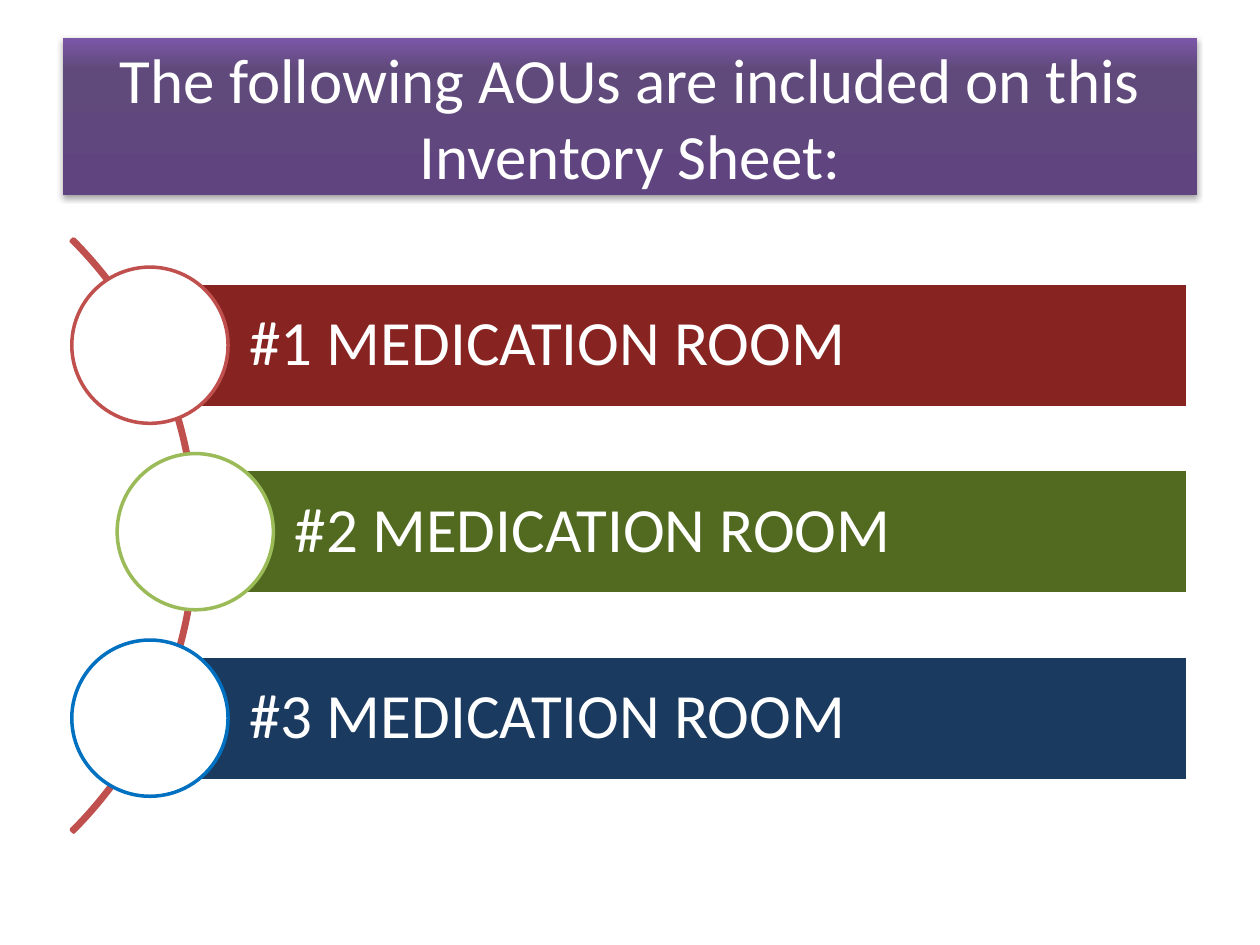
from dataclasses import dataclass

from lxml import etree
from pptx import Presentation
from pptx.dml.color import RGBColor
from pptx.enum.shapes import MSO_SHAPE as Shape
from pptx.enum.text import MSO_ANCHOR as Anchor, PP_ALIGN as Align
from pptx.oxml import parse_xml
from pptx.oxml.ns import nsdecls, qn
from pptx.util import Inches, Pt

# Content: label, bar colour, circle outline, left edge of the bar
TITLE = "The following AOUs are included on this Inventory Sheet:"
ROOMS = [
    ("#1 MEDICATION ROOM", "872321", "C0504D", 1.19),
    ("#2 MEDICATION ROOM", "516A20", "9BBB59", 1.55),
    ("#3 MEDICATION ROOM", "1B3A5F", "0070C0", 1.19),
]


@dataclass(frozen=True)
class Theme:
    font: str = "Calibri"
    size: int = 36
    line: int = 2
    white: str = "FFFFFF"
    arc: str = "C0504D"
    title_stops: tuple = ((0, "5F4480"), (80, "604A7B"), (100, "7C57A8"))


THEME = Theme()

# Layout in inches
BAR_RIGHT, BAR_HEIGHT = 9.43, 0.99
FIRST_CENTER, PITCH = 2.74, 1.48
CIRCLE = 1.24


def add_shape(slide, kind, left, top, width, height, fill=None, line=None):
    shape = slide.shapes.add_shape(
        kind, Inches(left), Inches(top), Inches(width), Inches(height))
    shape.shadow.inherit = False
    if fill:
        shape.fill.solid()
        shape.fill.fore_color.rgb = RGBColor.from_string(fill)
    else:
        shape.fill.background()
    if line:
        shape.line.color.rgb = RGBColor.from_string(line)
        shape.line.width = Pt(THEME.line)
    else:
        shape.line.fill.background()
    return shape


def set_text(shape, text, align):
    frame = shape.text_frame
    frame.word_wrap = True
    frame.vertical_anchor = Anchor.MIDDLE
    paragraph = frame.paragraphs[0]
    paragraph.text = text
    paragraph.alignment = align
    paragraph.font.name = THEME.font
    paragraph.font.size = Pt(THEME.size)
    paragraph.font.color.rgb = RGBColor.from_string(THEME.white)
    return frame, paragraph


def add_title(slide):
    banner = add_shape(slide, Shape.RECTANGLE, 0.5, 0.3, 9, 1.25)
    set_text(banner, TITLE, Align.CENTER)

    # Three-stop gradient running from bottom to top
    banner.fill.gradient()
    banner.fill.gradient_angle = 90
    stops = banner.fill._fill._gradFill.find(qn("a:gsLst"))
    for stop in list(stops):
        stops.remove(stop)
    for position, color in THEME.title_stops:
        stop = etree.SubElement(stops, qn("a:gs"), pos=str(position * 1000))
        etree.SubElement(stop, qn("a:srgbClr"), val=color)

    # Soft shadow below the banner
    effects = banner._element.spPr.find(qn("a:effectLst"))
    effects.append(parse_xml(
        f'<a:outerShdw {nsdecls("a")} blurRad="{Pt(3.1)}" dist="{Pt(1.8)}" '
        'dir="5400000" rotWithShape="0"><a:srgbClr val="000000">'
        '<a:alpha val="35000"/></a:srgbClr></a:outerShdw>'))


def add_arc(slide):
    arc = add_shape(slide, Shape.BLOCK_ARC, -5.1, 0.92, 6.66, 6.66, line=THEME.arc)
    for index, value in enumerate((189, 27, 0.004)):
        arc.adjustments[index] = value


def add_room(slide, center, label, color, outline, left):
    bar = add_shape(slide, Shape.RECTANGLE, left, center - BAR_HEIGHT / 2,
                    BAR_RIGHT - left, BAR_HEIGHT, color, THEME.white)
    frame, paragraph = set_text(bar, label, Align.LEFT)
    frame.margin_left = Inches(0.79)
    frame.margin_right = frame.margin_top = frame.margin_bottom = Inches(0.1)
    paragraph.line_spacing = 0.9
    add_shape(slide, Shape.OVAL, left - CIRCLE / 2, center - CIRCLE / 2,
              CIRCLE, CIRCLE, THEME.white, outline)


def main():
    deck = Presentation()
    deck.slide_width, deck.slide_height = Inches(10), Inches(7.5)
    slide = deck.slides.add_slide(deck.slide_layouts[6])
    add_title(slide)
    add_arc(slide)
    for index, room in enumerate(ROOMS):
        add_room(slide, FIRST_CENTER + index * PITCH, *room)
    deck.save("out.pptx")


if __name__ == "__main__":
    main()
